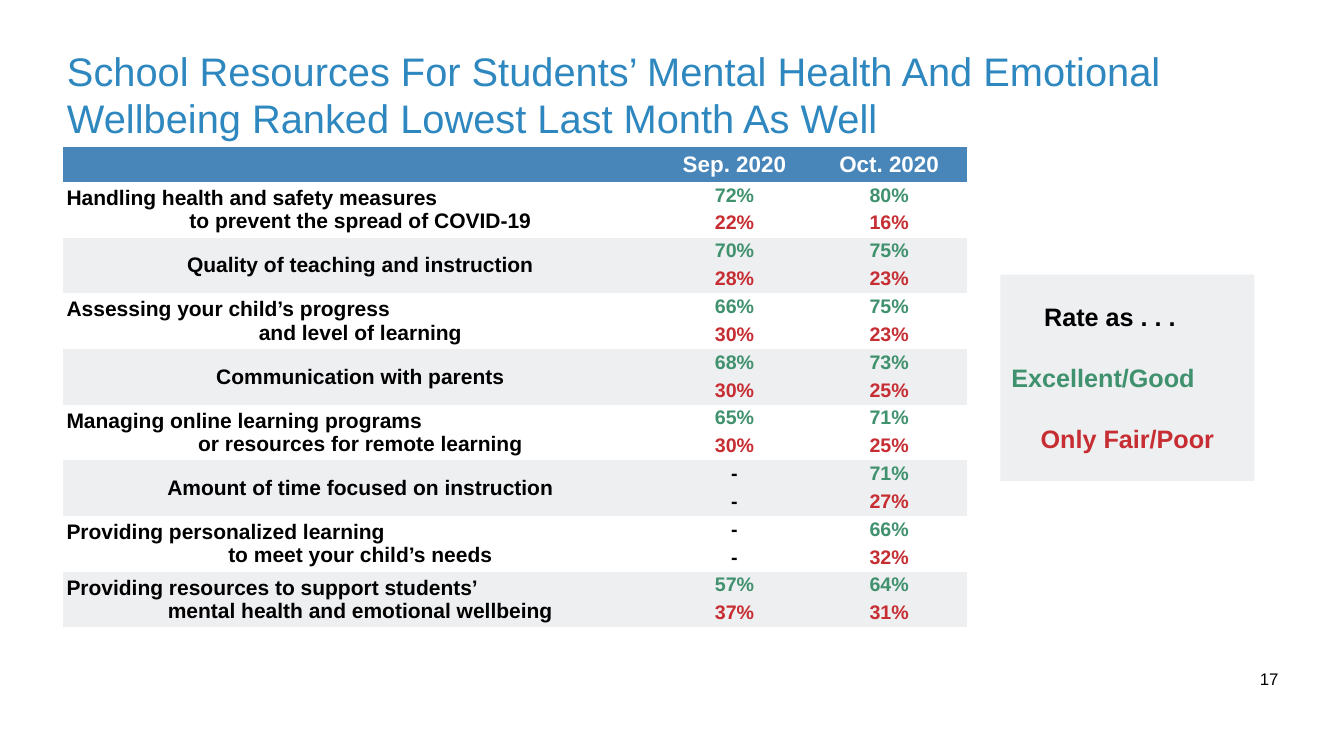
from lxml import etree
from pptx import Presentation
from pptx.dml.color import RGBColor
from pptx.enum.shapes import MSO_SHAPE
from pptx.enum.text import MSO_ANCHOR as Anchor, PP_ALIGN as Align
from pptx.oxml.ns import qn
from pptx.util import Inches, Pt

TITLE_BLUE = RGBColor(0x2E, 0x88, 0xBF)
HEADER_BLUE = RGBColor(0x48, 0x86, 0xBA)
GREEN = RGBColor(0x40, 0x91, 0x6E)
RED = RGBColor(0xC6, 0x2E, 0x33)
GREY = RGBColor(0xEE, 0xEF, 0xF1)
WHITE = RGBColor(0xFF, 0xFF, 0xFF)
BLACK = RGBColor(0, 0, 0)

HEADINGS = ["", "Sep. 2020", "Oct. 2020"]
# Label lines, then (excellent/good, only fair/poor) for each month
RATINGS = [
    (["Handling health and safety measures", "to prevent the spread of COVID-19"],
     ("72%", "22%"), ("80%", "16%")),
    (["Quality of teaching and instruction"], ("70%", "28%"), ("75%", "23%")),
    (["Assessing your child’s progress", "and level of learning"],
     ("66%", "30%"), ("75%", "23%")),
    (["Communication with parents"], ("68%", "30%"), ("73%", "25%")),
    (["Managing online learning programs", "or resources for remote learning"],
     ("65%", "30%"), ("71%", "25%")),
    (["Amount of time focused on instruction"], ("-", "-"), ("71%", "27%")),
    (["Providing personalized learning", "to meet your child’s needs"],
     ("-", "-"), ("66%", "32%")),
    (["Providing resources to support students’",
      "mental health and emotional wellbeing"],
     ("57%", "37%"), ("64%", "31%")),
]
# Text, colour and left indent in inches
LEGEND = [
    ("Rate as . . .", BLACK, 0.79),
    ("Excellent/Good", GREEN, 0.14),
    ("Only Fair/Poor", RED, 0.72),
]


def add_text(frame, text, size, color=BLACK, bold=False, align=Align.CENTER,
             spacing=None, before=None, indent=None):
    """Fill the frame's first paragraph, or append one if it has text."""
    para = frame.paragraphs[0] if not frame.text else frame.add_paragraph()
    para.alignment = align
    para.line_spacing = spacing
    para.space_before = before
    if indent is not None:
        properties = para._p.get_or_add_pPr()
        properties.set("marL", str(Inches(indent)))
        properties.set("indent", "0")
    span = para.add_run()
    span.text = text
    span.font.name = "Arial"
    span.font.size = Pt(size)
    span.font.bold = bold
    span.font.color.rgb = color


def set_frame(frame):
    frame.word_wrap = True
    frame.vertical_anchor = Anchor.MIDDLE
    frame.margin_left = frame.margin_right = Inches(0.08)
    frame.margin_top = frame.margin_bottom = Inches(0.08)
    return frame


def add_text_box(page, left, top, width, height, text, **style):
    box = page.shapes.add_textbox(Inches(left), Inches(top), Inches(width), Inches(height))
    add_text(set_frame(box.text_frame), text, **style)


def style_cell(cell, fill):
    """Give the cell a plain fill, tight margins and no borders."""
    cell.fill.solid()
    cell.fill.fore_color.rgb = fill
    cell.vertical_anchor = Anchor.MIDDLE
    cell.margin_left = cell.margin_right = Inches(0.06)
    cell.margin_top = cell.margin_bottom = Inches(0.04)
    properties = cell._tc.get_or_add_tcPr()
    for position, side in enumerate(("a:lnL", "a:lnR", "a:lnT", "a:lnB")):
        border = etree.Element(qn(side), w="0")
        etree.SubElement(border, qn("a:noFill"))
        properties.insert(position, border)


def add_ratings_table(page, left, top, width, height):
    header_height, month_width = 0.69, 3.07
    row_count = 1 + 2 * len(RATINGS)
    table = page.shapes.add_table(row_count, len(HEADINGS), Inches(left), Inches(top),
                                  Inches(width), Inches(height)).table
    table.columns[0].width = Inches(width - 2 * month_width)
    table.columns[1].width = table.columns[2].width = Inches(month_width)
    for row in table.rows:
        row.height = Inches((height - header_height) / (row_count - 1))
    table.rows[0].height = Inches(header_height)

    for column, heading in enumerate(HEADINGS):
        cell = table.cell(0, column)
        style_cell(cell, HEADER_BLUE)
        if heading:
            add_text(cell.text_frame, heading, size=32, color=WHITE, bold=True)

    for index, (label, *months) in enumerate(RATINGS):
        first = 1 + 2 * index
        for row in (first, first + 1):
            for column in range(len(HEADINGS)):
                style_cell(table.cell(row, column), GREY if index % 2 else WHITE)
        label_cell = table.cell(first, 0)
        label_cell.merge(table.cell(first + 1, 0))
        for line in label:
            last = line == label[-1]
            add_text(label_cell.text_frame, line, size=30, bold=True,
                     align=Align.CENTER if last else Align.LEFT)
        for column, shares in enumerate(months, start=1):
            for offset, (share, color) in enumerate(zip(shares, (GREEN, RED))):
                add_text(table.cell(first + offset, column).text_frame, share, size=28,
                         color=BLACK if share == "-" else color, bold=True, spacing=0.96)


def add_legend(page, left, top, width, height):
    box = page.shapes.add_shape(MSO_SHAPE.RECTANGLE, Inches(left), Inches(top),
                                Inches(width), Inches(height))
    box.shadow.inherit = False
    box.fill.solid()
    box.fill.fore_color.rgb = GREY
    box.line.fill.background()
    frame = set_frame(box.text_frame)
    for index, (text, color, indent) in enumerate(LEGEND):
        add_text(frame, text, size=36, color=color, bold=True, align=Align.LEFT,
                 before=Pt(44) if index else None, indent=indent)


def main():
    deck = Presentation()
    deck.slide_width, deck.slide_height = Inches(26.67), Inches(15)
    page = deck.slides.add_slide(deck.slide_layouts[6])
    add_text_box(page, 1.25, 0.84, 24.17, 2.08,
                 "School Resources For Students’ Mental Health And Emotional "
                 "Wellbeing Ranked Lowest Last Month As Well",
                 size=56.9, color=TITLE_BLUE, align=Align.LEFT, spacing=Pt(67))
    add_ratings_table(page, 1.26, 2.92, 17.92, 9.53)
    add_legend(page, 19.85, 5.45, 5.04, 4.09)
    add_text_box(page, 24.85, 13.19, 0.67, 0.56, "17", size=24)
    deck.save("out.pptx")


if __name__ == "__main__":
    main()
